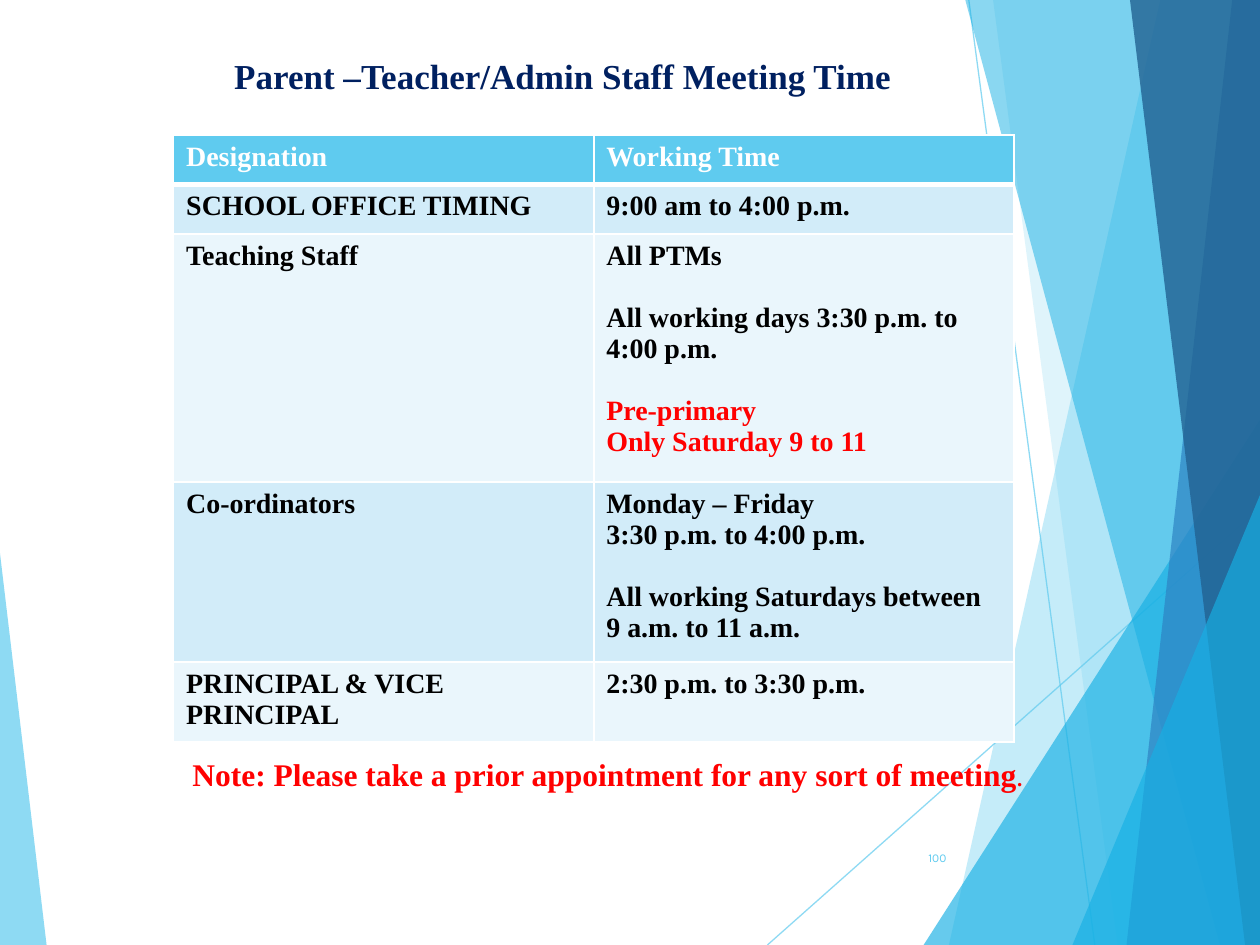
from dataclasses import dataclass
from lxml.etree import SubElement
from pptx import Presentation
from pptx.dml.color import RGBColor
from pptx.enum.shapes import MSO_CONNECTOR, MSO_SHAPE
from pptx.enum.text import MSO_ANCHOR, MSO_AUTO_SIZE, PP_ALIGN
from pptx.oxml.ns import qn
from pptx.util import Cm, Pt


@dataclass(frozen=True)
class Theme:
    sky: str = "5FCBEF"
    azure: str = "17B0E4"
    blue: str = "2E83C3"
    deep: str = "226292"
    navy: str = "002060"
    red: str = "FF0000"
    black: str = "000000"
    white: str = "FFFFFF"
    bands: tuple = ("D2ECF9", "EAF6FC")
    serif: str = "Times New Roman"
    sans: str = "Karla"
    title_size: float = 20
    note_size: float = 18
    cell_size: float = 16
    stop_size: float = 12
    number_size: float = 6.8


WIDTH, HEIGHT = 25.4, 19.05


def apply_format(target, values):
    for name, value in values.items():
        setattr(target, name, value)


def set_alpha(fill_parent, percent):
    colour = next(fill_parent.iter(qn("a:srgbClr")))
    SubElement(colour, qn("a:alpha"), val=str(percent * 1000))


class SlideBuilder:
    def __init__(self, slide, theme):
        self.slide = slide
        self.shapes = slide.shapes
        self.theme = theme

    def add_words(self, paragraph, text, colour, size, bold=True, font=None):
        run = paragraph.add_run()
        run.text = text
        apply_format(run.font, {"name": font or self.theme.serif,
                                "size": Pt(size), "bold": bold})
        run.font.color.rgb = RGBColor.from_string(colour)

    def ray(self, start, end):
        line = self.shapes.add_connector(
            MSO_CONNECTOR.STRAIGHT, *map(Cm, start + end))
        line.line.color.rgb = RGBColor.from_string(self.theme.sky)
        line.line.width = Pt(0.75)
        properties = line._element.spPr
        set_alpha(properties, 70)
        SubElement(properties, qn("a:effectLst"))

    def paint(self, shape, colour, alpha):
        shape.shadow.inherit = False
        shape.line.fill.background()
        shape.fill.solid()
        shape.fill.fore_color.rgb = RGBColor.from_string(colour)
        set_alpha(shape._element.spPr, alpha)

    def facet(self, top_x, bottom_x, colour, alpha):
        corners = [(WIDTH, 0), (WIDTH, HEIGHT), (bottom_x, HEIGHT)]
        outline = self.shapes.build_freeform(Cm(top_x), Cm(0))
        outline.add_line_segments([(Cm(x), Cm(y)) for x, y in corners])
        self.paint(outline.convert_to_shape(), colour, alpha)

    def wedge(self, left, right, top, apex, colour, alpha):
        triangle = self.shapes.add_shape(
            MSO_SHAPE.ISOSCELES_TRIANGLE, Cm(left), Cm(top),
            Cm(right - left), Cm(HEIGHT - top))
        triangle.adjustments[0] = apex
        self.paint(triangle, colour, alpha)

    def title(self, text, left, top, width, height):
        heading = self.shapes.title
        self.shapes._spTree.append(heading._element)
        apply_format(heading, {"left": Cm(left), "top": Cm(top),
                               "width": Cm(width), "height": Cm(height)})
        apply_format(heading.text_frame, {
            "auto_size": MSO_AUTO_SIZE.NONE, "word_wrap": True,
            "vertical_anchor": MSO_ANCHOR.MIDDLE})
        paragraph = heading.text_frame.paragraphs[0]
        paragraph.alignment = PP_ALIGN.CENTER
        self.add_words(paragraph, text, self.theme.navy, self.theme.title_size)

    def text(self, left, top, width, height, alignment, inset):
        frame = self.shapes.add_textbox(
            Cm(left), Cm(top), Cm(width), Cm(height)).text_frame
        apply_format(frame, {
            "word_wrap": True, "vertical_anchor": MSO_ANCHOR.MIDDLE,
            "margin_left": Cm(inset), "margin_right": Cm(inset)})
        frame.paragraphs[0].alignment = alignment
        return frame.paragraphs[0]

    def borders(self, cell, widths):
        properties = cell._tc.get_or_add_tcPr()
        for side in "LRTB":
            edge = SubElement(properties, qn(f"a:ln{side}"),
                              w=str(Pt(widths.get(side, 1))))
            fill = SubElement(edge, qn("a:solidFill"))
            SubElement(fill, qn("a:srgbClr"), val=self.theme.white)

    def cell(self, cell, lines, colour, fill, widths):
        self.borders(cell, widths)
        cell.fill.solid()
        cell.fill.fore_color.rgb = RGBColor.from_string(fill)
        for index, (words, gap, accent) in enumerate(lines):
            frame = cell.text_frame
            paragraph = frame.add_paragraph() if index else frame.paragraphs[0]
            paragraph.space_before = Pt(gap)
            self.add_words(paragraph, words, accent or colour, self.theme.cell_size)

    def table(self, left, top, width, heights, rows):
        table = self.shapes.add_table(
            len(rows), 2, Cm(left), Cm(top), Cm(width), Cm(sum(heights))).table
        for index, (height, row) in enumerate(zip(heights, rows)):
            table.rows[index].height = Cm(height)
            header = index == 0
            colour = self.theme.white if header else self.theme.black
            fill = self.theme.sky if header else self.theme.bands[(index - 1) % 2]
            widths = {0: {"B": 3}, 1: {"T": 3}}.get(index, {})
            for column, lines in enumerate(row):
                self.cell(table.cell(index, column), lines, colour, fill, widths)


def line(text, gap=0, accent=None):
    return text, gap, accent


def main():
    theme = Theme()
    deck = Presentation()
    apply_format(deck, {"slide_width": Cm(WIDTH), "slide_height": Cm(HEIGHT)})
    page = SlideBuilder(deck.slides.add_slide(deck.slide_layouts[5]), theme)

    page.ray((19.53, 0), (22.07, HEIGHT))
    page.ray((WIDTH, 10.24), (15.47, HEIGHT))
    page.facet(23.39, 19.13, theme.sky, 36)
    page.facet(20.02, 22.53, theme.sky, 20)
    page.wedge(18.62, WIDTH, 8.46, 1, theme.azure, 66)
    page.facet(19.46, 24.59, theme.azure, 50)
    page.facet(24.84, 22.71, theme.blue, 70)
    page.facet(22.78, 25.1, theme.deep, 80)
    page.wedge(21.62, WIDTH, 9.98, 1, theme.azure, 66)
    page.wedge(0, 0.94, 11.15, 0, theme.sky, 70)

    note = page.text(3.7, 15.1, 19.4, 1, PP_ALIGN.LEFT, 0.18)
    page.add_words(note, "Note: Please take a prior appointment for any sort of meeting",
                   theme.red, theme.note_size)
    page.add_words(note, ".", theme.red, theme.stop_size)

    page.title("Parent –Teacher/Admin Staff Meeting Time", 2.06, 0.97, 18.57, 1.12)

    blank_line = 17.7
    schedule = [
        ([line("Designation")], [line("Working Time")]),
        ([line("SCHOOL OFFICE TIMING")], [line("9:00 am to 4:00 p.m.")]),
        ([line("Teaching Staff")],
         [line("All PTMs"),
          line("All working days 3:30 p.m. to 4:00 p.m.", blank_line),
          line("Pre-primary", blank_line, theme.red),
          line("Only Saturday 9 to 11", accent=theme.red)]),
        ([line("Co-ordinators")],
         [line("Monday – Friday"),
          line("3:30 p.m. to 4:00 p.m."),
          line("All working Saturdays between 9 a.m. to 11 a.m.", blank_line)]),
        ([line("PRINCIPAL & VICE PRINCIPAL")], [line("2:30 p.m. to 3:30 p.m.")]),
    ]
    page.table(3.5, 2.72, 16.94, [1, 1, 5, 3.63, 1.61], schedule)

    number = page.text(17.91, 16.79, 1.42, 1.02, PP_ALIGN.RIGHT, 0.25)
    page.add_words(number, "100", theme.sky, theme.number_size, False, theme.sans)

    deck.save("out.pptx")


if __name__ == "__main__":
    main()
